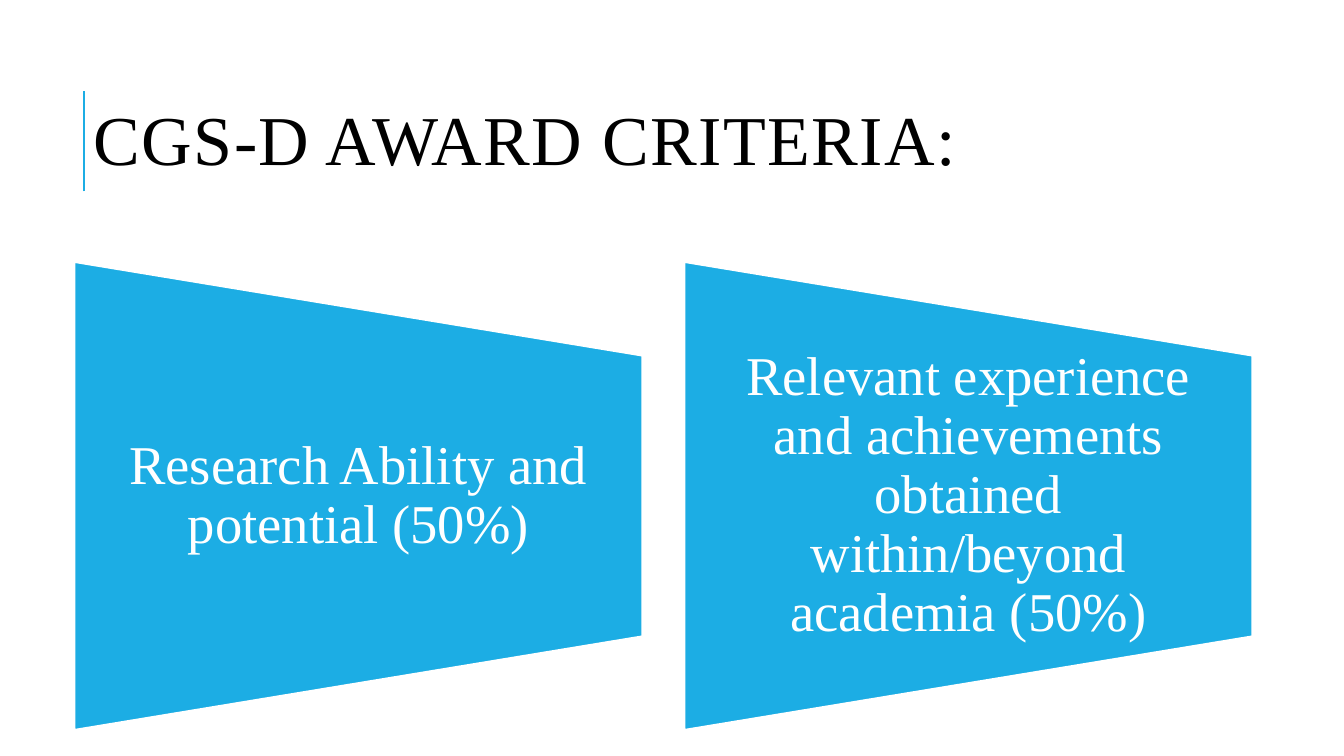
import dataclasses

import pptx
import pptx.dml.color
import pptx.enum.shapes
import pptx.enum.text
import pptx.oxml
import pptx.util

FONT = "Times New Roman"
BLUE, WHITE, BLACK = "1CADE4", "FFFFFF", "000000"

prs = pptx.Presentation()
prs.slide_width = pptx.util.Inches(13.33)
prs.slide_height = pptx.util.Inches(7.5)


@dataclasses.dataclass(frozen=True)
class Criterion:
    column: int
    text: str


CRITERIA = [
    Criterion(0, "Research Ability and potential (50%)"),
    Criterion(1, "Relevant experience and achievements obtained within/beyond academia (50%)"),
]
CARD_LEFT, CARD_STEP, CARD_WIDTH = 5.55, 45.39, 42.24
CARD_MIDDLE, CARD_HEIGHT = 65.6, 61.87
TEXT_SHARE = 0.6


def col(percent: float) -> int:
    return int(prs.slide_width * percent / 100)


def row(percent: float) -> int:
    return int(prs.slide_height * percent / 100)


def rgb(value: str) -> pptx.dml.color.RGBColor:
    return pptx.dml.color.RGBColor.from_string(value)


def write(sp, text: str, *, size: float, color: str, leading: float,
          align=pptx.enum.text.PP_ALIGN.LEFT, inset: tuple = (0.1, 0.05),
          spacing: int = 0) -> None:
    tf = sp.text_frame
    tf.word_wrap = True
    tf.auto_size = pptx.enum.text.MSO_AUTO_SIZE.NONE
    tf.vertical_anchor = pptx.enum.text.MSO_ANCHOR.MIDDLE
    tf.margin_left = tf.margin_right = pptx.util.Inches(inset[0])
    tf.margin_top = tf.margin_bottom = pptx.util.Inches(inset[1])
    p = tf.paragraphs[0]
    p.alignment = align
    p.line_spacing = leading
    r = p.add_run()
    r.text = text
    r.font.name = FONT
    r.font.size = pptx.util.Pt(size)
    r.font.color.rgb = rgb(color)
    if spacing:
        r.font._element.set("spc", str(spacing))


def add_title(s, text: str) -> None:
    sp = s.shapes.title
    sp.left, sp.top, sp.width, sp.height = col(6.23), row(9.6), col(70.52), row(19.2)
    write(sp, text, size=50, color=BLACK, leading=0.8, spacing=100)


def add_title_rule(s) -> None:
    rule = s.shapes.add_connector(
        pptx.enum.shapes.MSO_CONNECTOR.STRAIGHT, col(6.23), row(25.33), col(6.23), row(12))
    rule.line.color.rgb = rgb(BLUE)
    rule.line.width = pptx.util.Pt(1.5)
    rule._element.spPr.append(pptx.oxml.parse_xml(
        '<a:effectLst xmlns:a="http://schemas.openxmlformats.org/drawingml/2006/main"/>'))


def add_card(s, criterion: Criterion) -> None:
    left = col(CARD_LEFT + criterion.column * CARD_STEP)
    width, height, middle = col(CARD_WIDTH), row(CARD_HEIGHT), row(CARD_MIDDLE)
    sp = s.shapes.add_shape(
        pptx.enum.shapes.MSO_SHAPE.FLOWCHART_MANUAL_OPERATION,
        left + (width - height) // 2, middle - width // 2, height, width)
    sp.rotation = 270
    sp.shadow.inherit = False
    sp.fill.solid()
    sp.fill.fore_color.rgb = rgb(BLUE)
    sp.line.color.rgb = rgb(WHITE)
    sp.line.width = pptx.util.Pt(1.25)
    text_height = int(height * TEXT_SHARE)
    box = s.shapes.add_textbox(left, middle - text_height // 2, width, text_height)
    write(box, criterion.text, size=39, color=WHITE, leading=0.9,
          align=pptx.enum.text.PP_ALIGN.CENTER, inset=(0.27, 0))


def main() -> None:
    s = prs.slides.add_slide(prs.slide_layouts.get_by_name("Title Only"))
    add_title_rule(s)
    add_title(s, "CGS-D AWARD CRITERIA:")
    for criterion in CRITERIA:
        add_card(s, criterion)
    prs.save("out.pptx")


if __name__ == "__main__":
    main()
